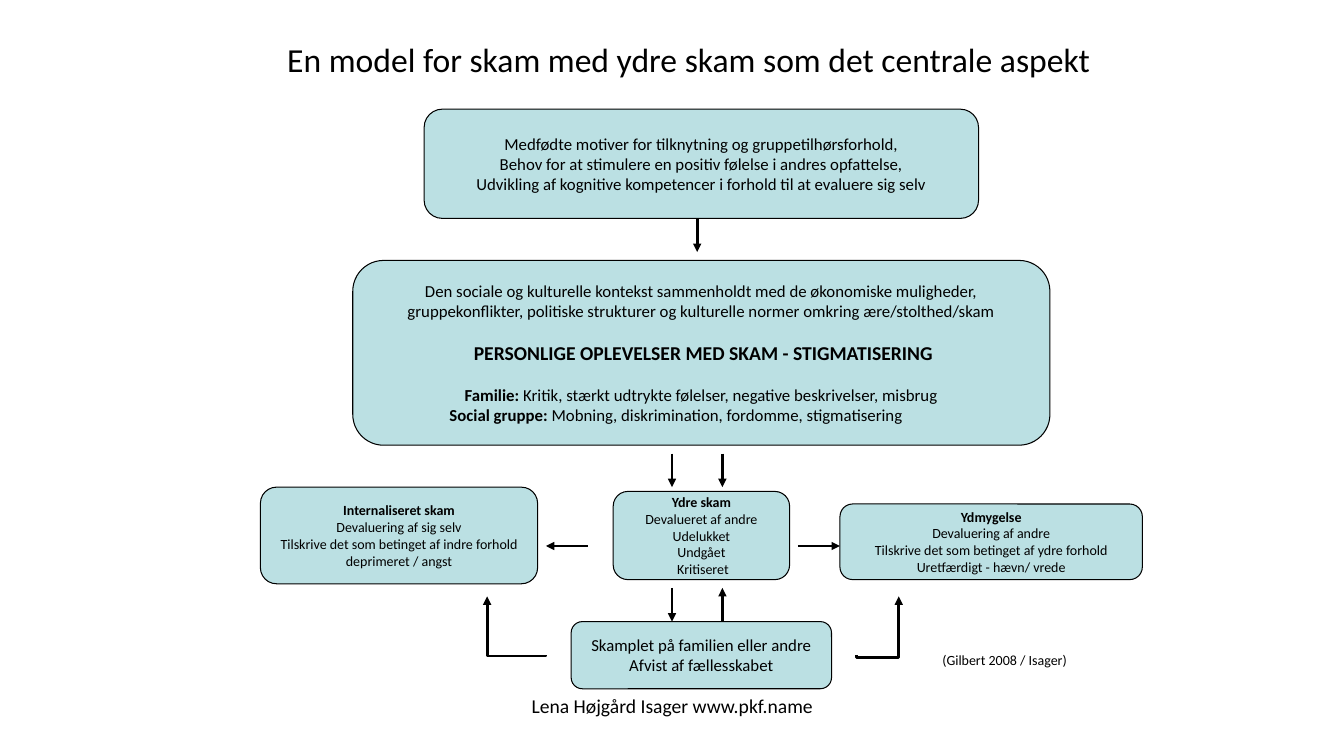
from lxml.etree import SubElement
from pptx import Presentation
from pptx.dml.color import RGBColor
from pptx.enum.shapes import MSO_CONNECTOR, MSO_SHAPE
from pptx.enum.text import MSO_ANCHOR, PP_ALIGN
from pptx.oxml.ns import qn
from pptx.util import Inches, Pt

COLORS = {"ink": "000000", "box": "BBE0E3"}
FONT = "Calibri"
CELLS_PER_INCH = 12

TITLE = ("En model for skam med ydre skam som det centrale aspekt", (24, 3, 116, 8), 24)
CITATION = ("(Gilbert 2008 / Isager)", (111, 77, 17.4, 3.2), 10)
CREDIT = ("Lena Højgård Isager www.pkf.name", (54.75, 82, 50.6, 6), 14)

BOXES = [
    {"area": (50.5, 13, 66, 13), "size": 12, "lines": [
        "Medfødte motiver for tilknytning og gruppetilhørsforhold,",
        "Behov for at stimulere en positiv følelse i andres opfattelse,",
        "Udvikling af kognitive kompetencer i forhold til at evaluere sig selv"]},
    {"area": (42, 31, 83, 22), "size": 12, "lines": [
        "Den sociale og kulturelle kontekst sammenholdt med de økonomiske muligheder,",
        "gruppekonflikter, politiske strukturer og kulturelle normer omkring ære/stolthed/skam",
        {"bold": " PERSONLIGE OPLEVELSER MED SKAM - STIGMATISERING", "size": 14, "before": 14.6},
        {"bold": "Familie:", "before": 14.6,
         "plain": " Kritik, stærkt udtrykte følelser, negative beskrivelser, misbrug"},
        {"bold": "Social gruppe:", "right": 6,
         "plain": " Mobning, diskrimination, fordomme, stigmatisering"}]},
    {"area": (31, 58, 33, 11.5), "size": 10, "lines": [
        {"bold": "Internaliseret skam"},
        "Devaluering af sig selv",
        "Tilskrive det som betinget af indre forhold",
        "deprimeret / angst"]},
    {"area": (73, 58.5, 21, 10.5), "size": 10, "lines": [
        {"bold": "Ydre skam"},
        "Devalueret af andre",
        "Udelukket",
        "Undgået",
        " Kritiseret"]},
    {"area": (100, 60, 36, 9), "size": 10, "lines": [
        {"bold": "Ydmygelse"},
        "Devaluering af andre",
        "Tilskrive det som betinget af ydre forhold",
        "Uretfærdigt - hævn/ vrede"]},
    {"area": (68, 74, 31, 8), "size": 12, "lines": [
        "Skamplet på familien eller andre",
        "Afvist af fællesskabet"]},
]

STRAIGHT_ARROWS = [
    (83, 26, 83, 30),
    (80, 54, 80, 58),
    (86, 54, 86, 58),
    (95, 65, 100, 65),
    (70, 65, 65, 65),
    (80, 70, 80, 74),
    (86, 74, 86, 70),
]
BENT_ARROWS = [((102, 78, 107, 71), -4200), ((65, 78, 58, 71), -1500)]


def grid(*cells):
    return [Inches(cell / CELLS_PER_INCH) for cell in cells]


def color(name):
    return RGBColor.from_string(COLORS[name])


def add_span(para, text, size, bold=False):
    span = para.add_run()
    span.text = text
    span.font.name = FONT
    span.font.size = Pt(size)
    span.font.bold = bold
    span.font.color.rgb = color("ink")


def add_box(page, area, size, lines):
    box = page.shapes.add_shape(MSO_SHAPE.ROUNDED_RECTANGLE, *grid(*area))
    box.shadow.inherit = False
    box.fill.solid()
    box.fill.fore_color.rgb = color("box")
    box.line.color.rgb = color("ink")
    box.line.width = Pt(0.75)
    frame = box.text_frame
    frame.word_wrap = True
    frame.vertical_anchor = MSO_ANCHOR.MIDDLE
    for index, line in enumerate(lines):
        parts = {"plain": line} if isinstance(line, str) else line
        para = frame.add_paragraph() if index else frame.paragraphs[0]
        para.alignment = PP_ALIGN.CENTER
        if "before" in parts:
            para.space_before = Pt(parts["before"])
        if "right" in parts:
            para._p.get_or_add_pPr().set("marR", str(grid(parts["right"])[0]))
        for weight in ("bold", "plain"):
            if weight in parts:
                add_span(para, parts[weight], parts.get("size", size), weight == "bold")


def add_arrow(page, kind, ends):
    arrow = page.shapes.add_connector(kind, *grid(*ends))
    arrow.line.color.rgb = color("ink")
    arrow.line.width = Pt(2)
    SubElement(arrow.line._get_or_add_ln(), qn("a:tailEnd"), type="triangle")
    SubElement(arrow._element.spPr, qn("a:effectLst"))
    return arrow


def add_bent_arrow(page, ends, bend):
    arrow = add_arrow(page, MSO_CONNECTOR.ELBOW, ends)
    x1, y1, x2, y2 = ends
    across, rise = abs(x2 - x1), abs(y2 - y1)
    left, top = (x1 + x2 - rise) / 2, (y1 + y2 - across) / 2
    arrow.left, arrow.top, arrow.width, arrow.height = grid(left, top, rise, across)
    frame = arrow._element.spPr.find(qn("a:xfrm"))
    for flip in ("flipH", "flipV"):
        frame.attrib.pop(flip, None)
    frame.set("rot", str((270 if x2 > x1 else 90) * 60000))
    if x2 < x1:
        frame.set("flipH", "1")
    guides = arrow._element.spPr.find(qn("a:prstGeom")).find(qn("a:avLst"))
    SubElement(guides, qn("a:gd"), name="adj1", fmla=f"val {bend}")


def add_label(page, content, align, wrap):
    text, area, size = content
    label = page.shapes.add_textbox(*grid(*area))
    label.text_frame.word_wrap = wrap
    para = label.text_frame.paragraphs[0]
    para.alignment = align
    add_span(para, text, size)


def add_title(page):
    text, area, size = TITLE
    title = page.shapes.title
    title.left, title.top, title.width, title.height = grid(*area)
    title.text_frame.vertical_anchor = MSO_ANCHOR.MIDDLE
    para = title.text_frame.paragraphs[0]
    para.alignment = PP_ALIGN.CENTER
    add_span(para, text, size)


def main():
    deck = Presentation()
    deck.slide_width, deck.slide_height = grid(160, 90)
    page = deck.slides.add_slide(deck.slide_layouts[5])
    add_title(page)
    for box in BOXES:
        add_box(page, **box)
    for ends in STRAIGHT_ARROWS:
        add_arrow(page, MSO_CONNECTOR.STRAIGHT, ends)
    for ends, bend in BENT_ARROWS:
        add_bent_arrow(page, ends, bend)
    add_label(page, CITATION, PP_ALIGN.LEFT, False)
    add_label(page, CREDIT, PP_ALIGN.CENTER, True)
    deck.save("out.pptx")


if __name__ == "__main__":
    main()
